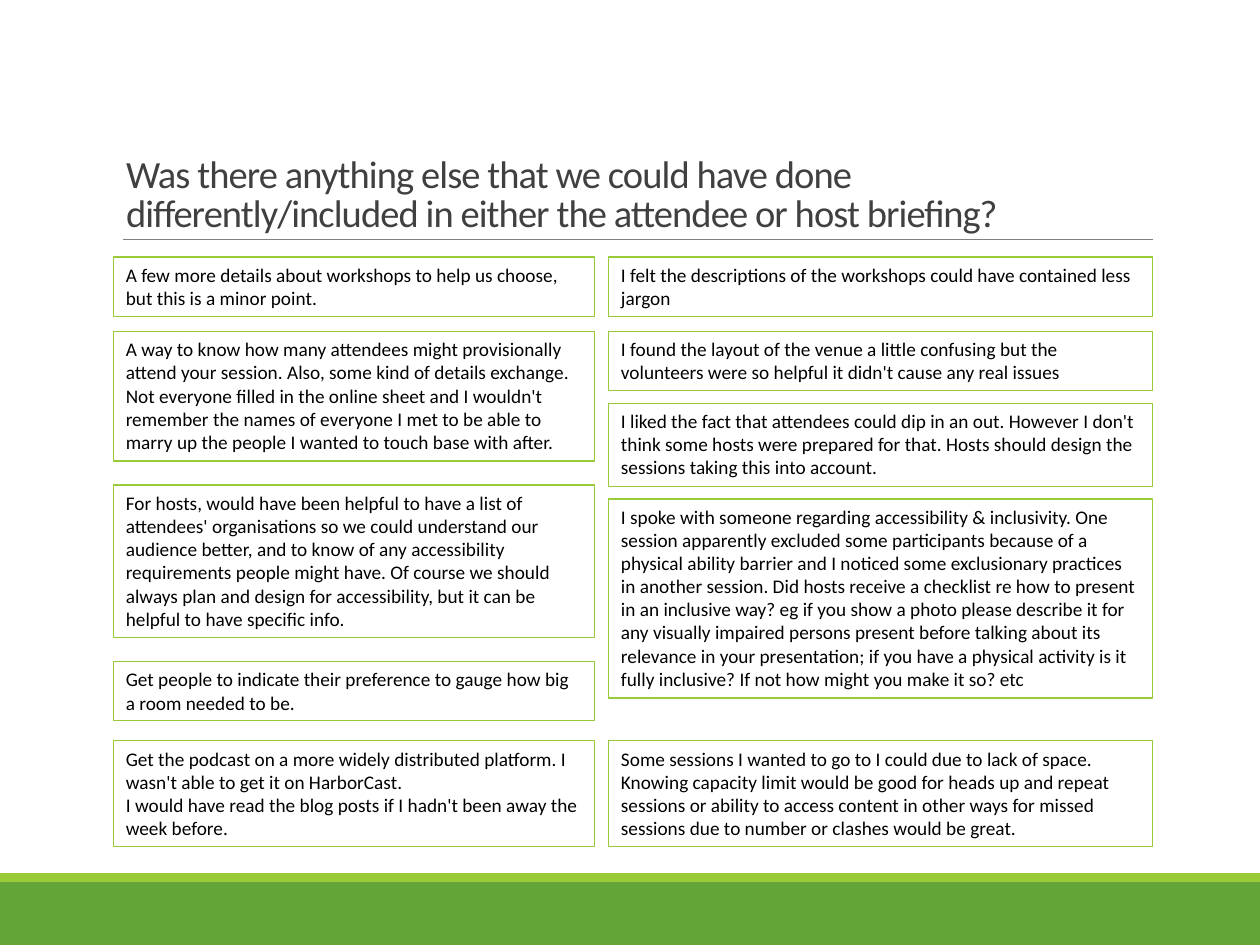
"""Build a slide of feedback comments on the attendee and host briefings."""
from lxml.etree import SubElement
from pptx import Presentation
from pptx.dml.color import RGBColor
from pptx.enum.shapes import MSO_CONNECTOR, MSO_SHAPE
from pptx.enum.text import MSO_ANCHOR, MSO_AUTO_SIZE, PP_ALIGN
from pptx.oxml.ns import qn
from pptx.util import Inches, Pt

GREEN = RGBColor(0x63, 0xA5, 0x37)
LIME = RGBColor(0x99, 0xCB, 0x38)
GREY = RGBColor(0x80, 0x80, 0x80)
DARK_GREY = RGBColor(0x40, 0x40, 0x40)
BLACK = RGBColor(0, 0, 0)

LEFT_COMMENTS = [
    (2.04, 0.47, "A few more details about workshops to help us choose, but this is a minor point."),
    (2.63, 1.03, "A way to know how many attendees might provisionally attend your session. "
     "Also, some kind of details exchange. Not everyone filled in the online sheet and I "
     "wouldn't remember the names of everyone I met to be able to marry up the people I "
     "wanted to touch base with after."),
    (3.85, 1.21, "For hosts, would have been helpful to have a list of attendees' organisations "
     "so we could understand our audience better, and to know of any accessibility "
     "requirements people might have. Of course we should always plan and design for "
     "accessibility, but it can be helpful to have specific info."),
    (5.25, 0.47, "Get people to indicate their preference to gauge how big a room needed to be."),
    (5.88, 0.84, "Get the podcast on a more widely distributed platform. I wasn't able to get it "
     "on HarborCast.\vI would have read the blog posts if I hadn't been away the week before."),
]
RIGHT_COMMENTS = [
    (2.04, 0.47, "I felt the descriptions of the workshops could have contained less jargon"),
    (2.63, 0.47, "I found the layout of the venue a little confusing but the volunteers were so "
     "helpful it didn't cause any real issues"),
    (3.2, 0.66, "I liked the fact that attendees could dip in an out. However I don't think some "
     "hosts were prepared for that. Hosts should design the sessions taking this into account."),
    (3.96, 1.58, "I spoke with someone regarding accessibility & inclusivity. One session "
     "apparently excluded some participants because of a physical ability barrier and I "
     "noticed some exclusionary practices in another session. Did hosts receive a checklist "
     "re how to present in an inclusive way? eg if you show a photo please describe it for "
     "any visually impaired persons present before talking about its relevance in your "
     "presentation; if you have a physical activity is it fully inclusive? If not how might "
     "you make it so? etc"),
    (5.88, 0.84, "Some sessions I wanted to go to I could due to lack of space. Knowing capacity "
     "limit would be good for heads up and repeat sessions or ability to access content in "
     "other ways for missed sessions due to number or clashes would be great."),
]
COLUMNS = [(0.9, 3.82, LEFT_COMMENTS), (4.83, 4.32, RIGHT_COMMENTS)]

presentation = Presentation()
presentation.slide_width = Inches(10)
presentation.slide_height = Inches(7.5)
slide = presentation.slides.add_slide(presentation.slide_layouts[5])

for top, height, color in [(7, 0.5, GREEN), (6.93, 0.07, LIME)]:
    band = slide.shapes.add_shape(
        MSO_SHAPE.RECTANGLE, Inches(0), Inches(top), Inches(10), Inches(height))
    band.shadow.inherit = False
    band.fill.solid()
    band.fill.fore_color.rgb = color
    band.line.fill.background()

rule = slide.shapes.add_connector(
    MSO_CONNECTOR.STRAIGHT, Inches(0.98), Inches(1.9), Inches(9.15), Inches(1.9))
rule.line.color.rgb = GREY
rule.line.width = Pt(0.5)
SubElement(rule._element.spPr, qn("a:effectLst"))

title = slide.shapes.title
title.left, title.top = Inches(0.9), Inches(0.33)
title.width, title.height = Inches(8.25), Inches(1.59)
title.text_frame.text = ("Was there anything else that we could have done "
                         "differently/included in either the attendee or host briefing?")
title.text_frame.vertical_anchor = MSO_ANCHOR.BOTTOM
title.text_frame.auto_size = MSO_AUTO_SIZE.NONE
paragraph = title.text_frame.paragraphs[0]
paragraph.alignment = PP_ALIGN.LEFT
paragraph.line_spacing = 0.85
paragraph.font.name = "Calibri"
paragraph.font.size = Pt(22)
paragraph.font.color.rgb = DARK_GREY
paragraph.runs[0].font._element.set("spc", "-50")

for left, width, comments in COLUMNS:
    for top, height, text in comments:
        box = slide.shapes.add_shape(
            MSO_SHAPE.RECTANGLE, Inches(left), Inches(top), Inches(width), Inches(height))
        box.shadow.inherit = False
        box.fill.background()
        box.line.color.rgb = LIME
        box.line.width = Pt(0.75)
        text_frame = box.text_frame
        text_frame.word_wrap = True
        text_frame.auto_size = MSO_AUTO_SIZE.SHAPE_TO_FIT_TEXT
        text_frame.vertical_anchor = MSO_ANCHOR.TOP
        text_frame.text = text
        paragraph = text_frame.paragraphs[0]
        paragraph.alignment = PP_ALIGN.LEFT
        paragraph.font.name = "Calibri"
        paragraph.font.size = Pt(11)
        paragraph.font.color.rgb = BLACK

presentation.save("out.pptx")
